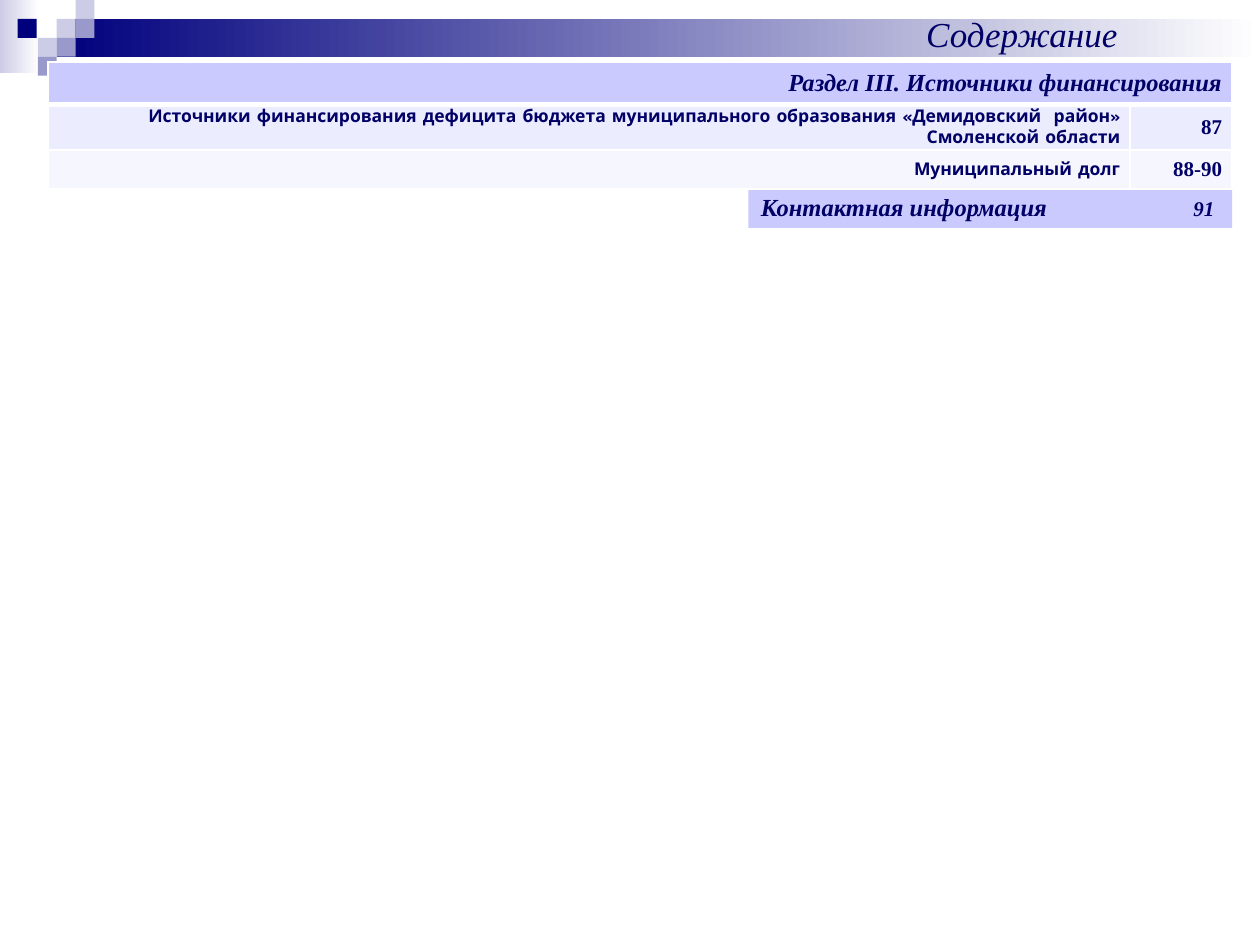
from lxml.etree import SubElement
from pptx import Presentation
from pptx.dml.color import RGBColor
from pptx.enum.shapes import MSO_SHAPE
from pptx.enum.text import MSO_ANCHOR as ANCHOR, MSO_AUTO_SIZE as AUTO, PP_ALIGN as ALIGN
from pptx.oxml.ns import qn
from pptx.util import Inches, Pt

SERIF, SANS = "Times New Roman", "Comic Neue"
INK, NAVY, PALE, MID, BAND = "000066", "00007D", "CCCCE6", "9999CC", "CACAFF"
WHITE = "FFFFFF"

HEADING = "Содержание"
SECTION = "Раздел III. Источники финансирования"
ENTRIES = [
    ("Источники финансирования дефицита бюджета муниципального образования "
     "«Демидовский  район» Смоленской области", "87", "ECECFF"),
    ("Муниципальный долг", "88-90", "F6F6FF"),
]
CONTACT, CONTACT_PAGE = "Контактная информация", "91"

GRADIENT_BARS = [(0, 0, 0.31, 0.58, PALE), (0.45, 0.15, 9.55, 0.3, NAVY)]
TILE = 0.15
TILES = [(0.45, 1, PALE), (0.6, 0, PALE), (0.6, 1, MID), (0.3, 2, PALE),
         (0.14, 1, NAVY), (0.45, 2, MID), (0.3, 3, MID)]
COLUMNS = [8.59, 0.81]
ROWS = [0.34, 0.36, 0.31]


def rgb(value):
    return RGBColor.from_string(value)


def box(slide, left, top, width, height, color, fade=False):
    shape = slide.shapes.add_shape(MSO_SHAPE.RECTANGLE, Inches(left), Inches(top),
                                   Inches(width), Inches(height))
    shape.shadow.inherit = False
    shape.line.fill.background()
    if fade:
        shape.fill.gradient()
        shape.fill.gradient_angle = 0
        for stop, tone in zip(shape.fill.gradient_stops, (color, WHITE)):
            stop.color.rgb = rgb(tone)
    else:
        shape.fill.solid()
        shape.fill.fore_color.rgb = rgb(color)
    return shape


def add_run(paragraph, text, size, font=SERIF, bold=True, italic=False):
    run = paragraph.add_run()
    run.text = text
    run.font.name, run.font.size = font, Pt(size)
    run.font.bold, run.font.italic = bold, italic
    run.font.color.rgb = rgb(INK)


def add_border(cell, bottom):
    properties = cell._tc.get_or_add_tcPr()
    for index, (side, width) in enumerate([("L", 1), ("R", 1), ("T", 1), ("B", bottom)]):
        line = SubElement(properties, qn(f"a:ln{side}"), w=str(Pt(width)))
        SubElement(SubElement(line, qn("a:solidFill")), qn("a:srgbClr"), val=WHITE)
        properties.insert(index, line)


def fill_cell(cell, text, color, size, font=SERIF, italic=False, bottom=1):
    cell.fill.solid()
    cell.fill.fore_color.rgb = rgb(color)
    cell.vertical_anchor = ANCHOR.MIDDLE
    cell.margin_left = cell.margin_right = Inches(0.08)
    cell.margin_top = cell.margin_bottom = 0
    paragraph = cell.text_frame.paragraphs[0]
    paragraph.alignment = ALIGN.RIGHT
    add_run(paragraph, text, size, font, italic=italic)
    add_border(cell, bottom)


def add_heading(slide):
    title = slide.shapes.title
    title.left, title.top, title.width, title.height = map(Inches, (6.26, 0.05, 3.7, 0.44))
    frame = title.text_frame
    frame.auto_size, frame.vertical_anchor = AUTO.NONE, ANCHOR.TOP
    frame.paragraphs[0].alignment = ALIGN.CENTER
    add_run(frame.paragraphs[0], HEADING, 20, bold=False, italic=True)
    tree = slide.shapes._spTree
    tree.append(title._element)


def add_contact(slide):
    frame = box(slide, 5.94, 1.47, 3.84, 0.34, BAND).text_frame
    frame.vertical_anchor = ANCHOR.MIDDLE
    paragraph = frame.paragraphs[0]
    paragraph.alignment = ALIGN.LEFT
    tabs = SubElement(paragraph._p.get_or_add_pPr(), qn("a:tabLst"))
    SubElement(tabs, qn("a:tab"), pos=str(Inches(3.6)), algn="r")
    add_run(paragraph, CONTACT + "\t", 14, italic=True)
    add_run(paragraph, CONTACT_PAGE, 12, italic=True)


def add_contents(slide):
    contents = slide.shapes.add_table(len(ROWS), len(COLUMNS), Inches(0.38), Inches(0.49),
                                      Inches(sum(COLUMNS)), Inches(sum(ROWS))).table
    for column, width in zip(contents.columns, COLUMNS):
        column.width = Inches(width)
    for row, height in zip(contents.rows, ROWS):
        row.height = Inches(height)
    section = contents.cell(0, 0)
    section.merge(contents.cell(0, 1))
    fill_cell(section, SECTION, BAND, 14, italic=True, bottom=3)
    for row, (topic, pages, color) in enumerate(ENTRIES, start=1):
        fill_cell(contents.cell(row, 0), topic, color, 10, SANS)
        fill_cell(contents.cell(row, 1), pages, color, 12)


def main():
    deck = Presentation()
    deck.slide_width, deck.slide_height = Inches(10), Inches(7.5)
    slide = deck.slides.add_slide(deck.slide_layouts[5])
    for left, top, width, height, color in GRADIENT_BARS:
        box(slide, left, top, width, height, color, fade=True)
    for left, step, color in TILES:
        box(slide, left, step * TILE, TILE, TILE, color)
    add_contact(slide)
    add_heading(slide)
    add_contents(slide)
    deck.save("out.pptx")


if __name__ == "__main__":
    main()
